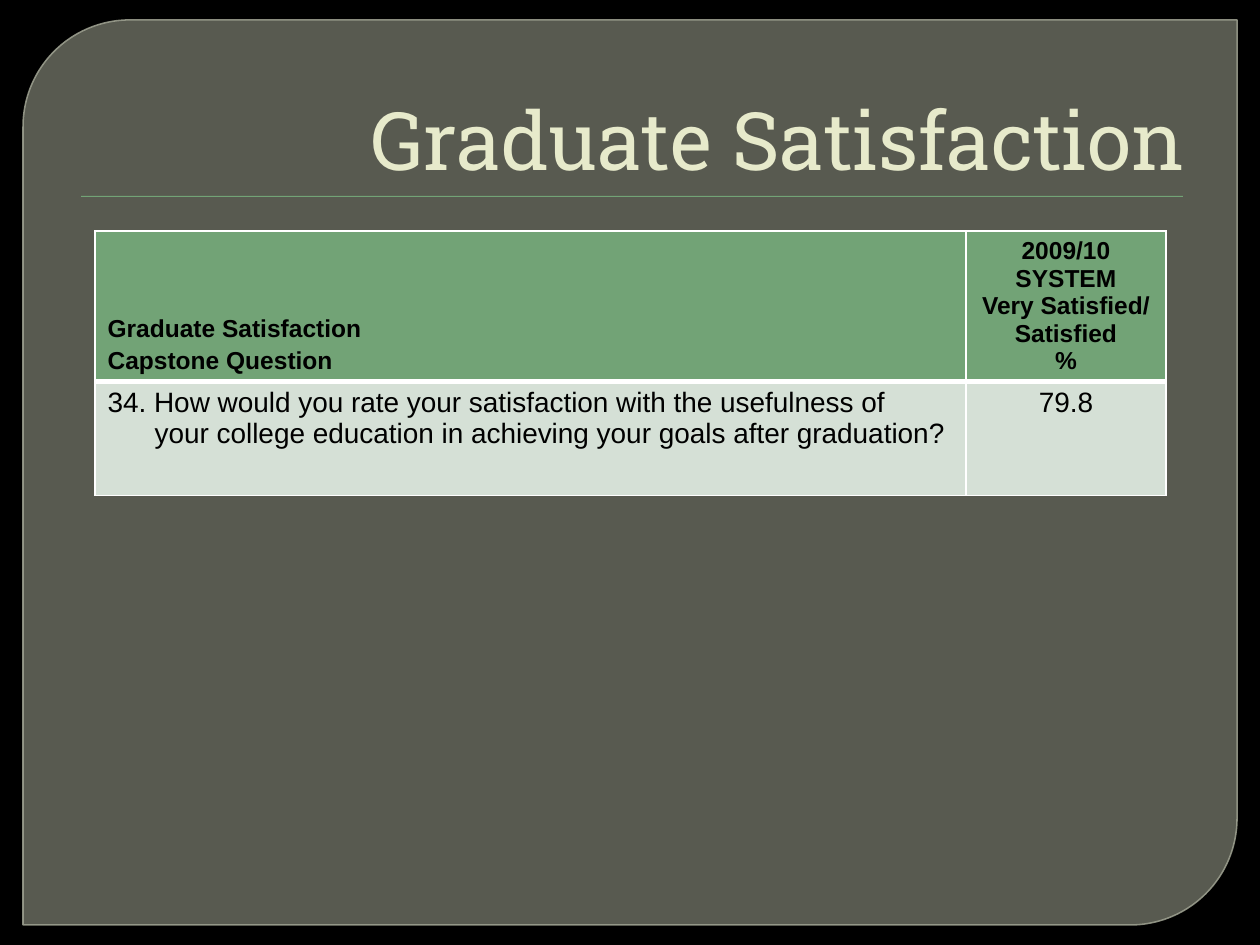
from lxml import etree
from pptx import Presentation
from pptx import util as u
from pptx.dml.color import RGBColor
from pptx.enum import shapes, text
from pptx.oxml import ns

TITLE = "Graduate Satisfaction"
HEADER = [
    ["Graduate Satisfaction", "Capstone Question"],
    ["2009/10", "SYSTEM", "Very Satisfied/", "Satisfied", "%"],
]
ANSWER = [
    ["34. How would you rate your satisfaction with the usefulness of",
     "your college education in achieving your goals after graduation?"],
    ["79.8"],
]
THEME = {
    "background": "000000", "panel": "888B7B", "panel_line": "9DA090",
    "accent": "72A376", "title": "E7EACB", "body": "D5E0D6",
    "ink": "000000", "border": "FFFFFF",
    "title_font": "Roboto Slab", "table_font": "Arial",
    "title_size": 46, "header_size": 14, "body_size": 16,
}
PANEL = (23, 20, 1214, 905)
RULE = (81, 196, 1102, 1)
TITLE_BOX = (63, 35, 1134, 158)
TABLE_AT = (95, 231)
COLUMNS = (871, 200)
ROWS = (150, 114)
QUESTION_INDENT = 47


def px(length):
    return u.Emu(round(length * 914400 / 126))


def color(name):
    return RGBColor.from_string(THEME[name])


def apply(target, values):
    for name, value in values.items():
        setattr(target, name, value)


def style_font(font, face, size, ink, bold=False):
    apply(font, {"name": THEME[face], "size": u.Pt(THEME[size]), "bold": bold})
    font.color.rgb = color(ink)


def set_alpha(fill_parent, percent):
    tone = fill_parent.find(ns.qn("a:solidFill"))[0]
    etree.SubElement(tone, ns.qn("a:alpha"), val=str(percent * 1000))


def add_block(page, kind, place, fill):
    block = page.shapes.add_shape(kind, *map(px, place))
    block.shadow.inherit = False
    block.fill.solid()
    block.fill.fore_color.rgb = color(fill)
    block.line.fill.background()
    return block


def add_borders(cell, bottom):
    properties = cell._tc.get_or_add_tcPr()
    for side, width in (("L", 1), ("R", 1), ("T", 1), ("B", bottom)):
        line = etree.SubElement(properties, ns.qn(f"a:ln{side}"), w=str(u.Pt(width)))
        fill = etree.SubElement(line, ns.qn("a:solidFill"))
        etree.SubElement(fill, ns.qn("a:srgbClr"), val=THEME["border"])


def fill_cell(cell, lines, is_header, is_question):
    add_borders(cell, 3 if is_header else 1)
    cell.fill.solid()
    cell.fill.fore_color.rgb = color("accent" if is_header else "body")
    cell.vertical_anchor = text.MSO_ANCHOR.BOTTOM if is_header else text.MSO_ANCHOR.TOP
    cell.text_frame.text = "\n".join(lines)
    for index, para in enumerate(cell.text_frame.paragraphs):
        para.alignment = text.PP_ALIGN.LEFT if is_question else text.PP_ALIGN.CENTER
        style_font(para.runs[0].font, "table_font",
                   "header_size" if is_header else "body_size", "ink", is_header)
        if is_question and is_header:
            para.space_before = u.Pt(THEME["header_size"] * 0.2)
        elif is_question and index:
            para._p.get_or_add_pPr().set("marL", str(px(QUESTION_INDENT)))


def add_panel(page):
    panel = add_block(page, shapes.MSO_SHAPE.ROUND_2_DIAG_RECTANGLE, PANEL, "panel")
    panel.adjustments[0] = 0.118
    panel.adjustments[1] = 0
    panel.line.color.rgb = color("panel_line")
    panel.line.width = u.Pt(0.87)
    set_alpha(panel._element.spPr, 65)
    set_alpha(panel.line._ln, 88)
    add_block(page, shapes.MSO_SHAPE.RECTANGLE, RULE, "accent")


def add_title(page):
    title = page.shapes.title
    title.element.getparent().append(title.element)
    apply(title, dict(zip(("left", "top", "width", "height"), map(px, TITLE_BOX))))
    title.text_frame.text = TITLE
    title.text_frame.vertical_anchor = text.MSO_ANCHOR.BOTTOM
    para = title.text_frame.paragraphs[0]
    para.alignment = text.PP_ALIGN.RIGHT
    style_font(para.runs[0].font, "title_font", "title_size", "title")


def add_results(page):
    table = page.shapes.add_table(
        len(ROWS), len(COLUMNS), *map(px, (*TABLE_AT, sum(COLUMNS), sum(ROWS)))).table
    for column, width in zip(table.columns, COLUMNS):
        column.width = px(width)
    for row, height in zip(table.rows, ROWS):
        row.height = px(height)
    for r, row in enumerate((HEADER, ANSWER)):
        for c, lines in enumerate(row):
            fill_cell(table.cell(r, c), lines, r == 0, c == 0)


def main():
    deck = Presentation()
    apply(deck, {"slide_width": px(1260), "slide_height": px(945)})
    page = deck.slides.add_slide(deck.slide_layouts[5])
    page.background.fill.solid()
    page.background.fill.fore_color.rgb = color("background")
    add_panel(page)
    add_title(page)
    add_results(page)
    deck.save("out.pptx")


if __name__ == "__main__":
    main()
